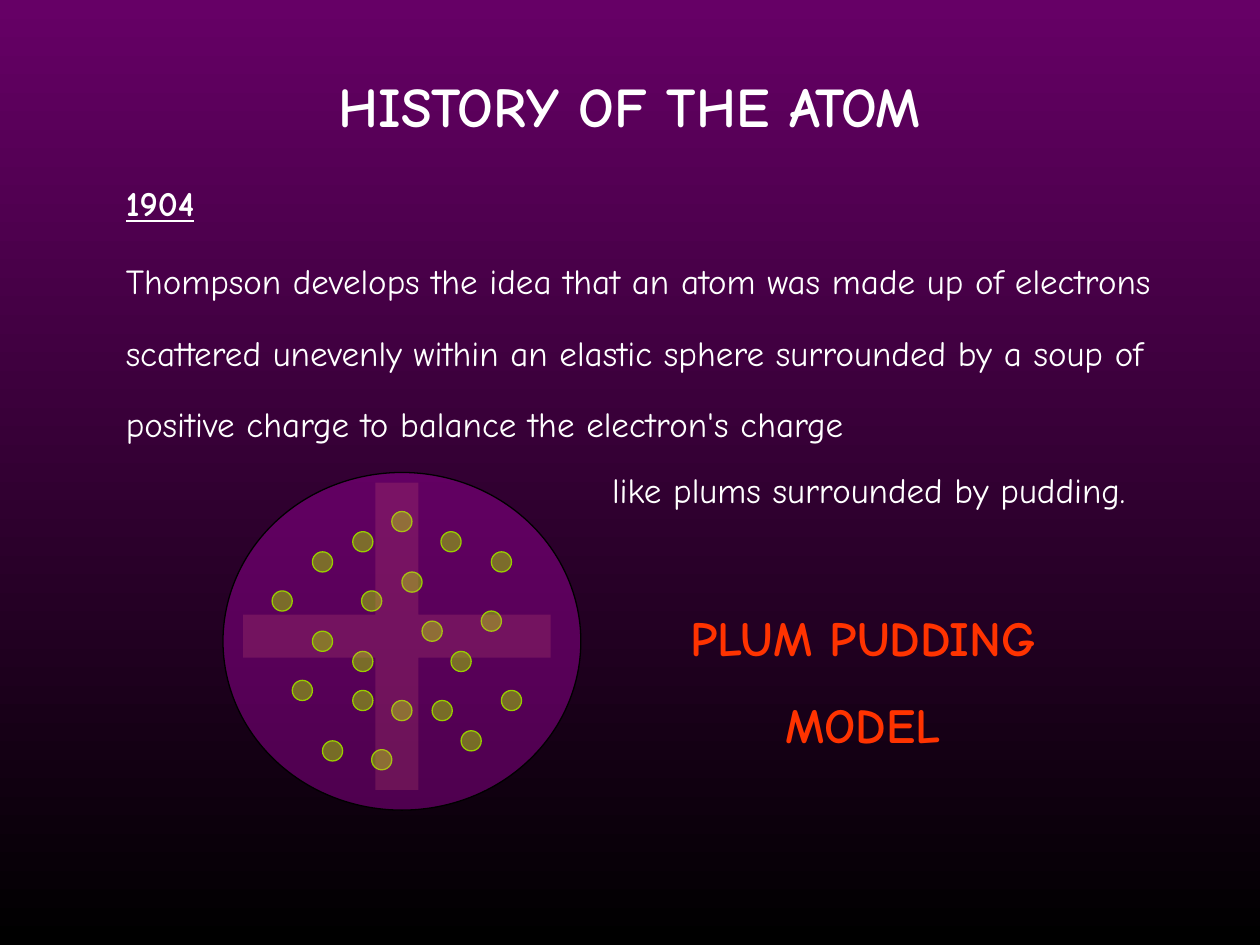
from lxml.etree import SubElement
from pptx import Presentation
from pptx.dml.color import RGBColor
from pptx.enum.shapes import MSO_SHAPE as Preset
from pptx.enum.text import MSO_AUTO_SIZE as AutoSize, PP_ALIGN as Align
from pptx.oxml.ns import qn
from pptx.util import Inches, Pt

WHITE = RGBColor(0xFF, 0xFF, 0xFF)
BLACK = RGBColor(0x00, 0x00, 0x00)
PURPLE = RGBColor(0x66, 0x00, 0x66)
PUDDING = RGBColor(0x99, 0x00, 0x99)
PLUM = RGBColor(0x99, 0xCC, 0x00)
PINK = RGBColor(0xFF, 0x7C, 0x80)
RED = RGBColor(0xFF, 0x33, 0x00)

FONT = "Comic Neue"
PLUM_SIZE = 0.16

TEXTS = [
    ((0, 0.52, 10, 0.63), ["HISTORY OF THE ATOM"],
     {"size": Pt(32), "bold": True}, {"alignment": Align.CENTER}),
    ((0.9, 1.39, 1.34, 0.43), ["1904"],
     {"bold": True, "underline": True}, {}),
    ((0.9, 1.78, 8.74, 2.13),
     ["Thompson develops the idea that an atom was made up of electrons "
      "scattered unevenly within an elastic sphere surrounded by a soup of "
      "positive charge to balance the electron's charge"],
     {}, {"line_spacing": 1.7}),
    ((4.76, 3.67, 4.73, 0.43), ["like plums surrounded by pudding."], {}, {}),
    ((4.92, 4.77, 3.86, 1.27), ["PLUM PUDDING", "MODEL"],
     {"size": Pt(28), "bold": True}, {"alignment": Align.CENTER}),
]

SPHERE = (1.77, 3.75, 2.84, 2.68)
CROSS = (1.93, 3.83, 2.44, 2.44)
PLUMS_BEHIND_CROSS = [
    (2.95, 5.95), (3.11, 4.06), (2.16, 4.69), (3.82, 4.85), (2.32, 5.4),
    (2.87, 4.69), (3.43, 5.56), (2.8, 5.17), (3.5, 4.22), (3.98, 5.48),
    (2.48, 4.38), (3.35, 4.93), (3.9, 4.38), (2.56, 5.88), (3.11, 5.56),
    (3.19, 4.54),
]
PLUMS_BEFORE_CROSS = [
    (2.8, 4.22), (3.58, 5.17), (3.66, 5.8), (2.48, 5.01), (2.8, 5.48),
]


def apply(target, values):
    for name, value in values.items():
        setattr(target, name, value)


def add_text(slide, box, lines, font_format, paragraph_format):
    frame = slide.shapes.add_textbox(*map(Inches, box)).text_frame
    apply(frame, {"word_wrap": True, "auto_size": AutoSize.SHAPE_TO_FIT_TEXT})
    for index, line in enumerate(lines):
        paragraph = frame.add_paragraph() if index else frame.paragraphs[0]
        apply(paragraph, paragraph_format)
        run = paragraph.add_run()
        run.text = line
        apply(run.font, {"name": FONT, "size": Pt(20), **font_format})
        run.font.color.rgb = RED if len(lines) > 1 else WHITE
        if index:
            paragraph.space_before = Pt(16)


def add_shape(slide, preset, box, color, opacity, line_color=None):
    shape = slide.shapes.add_shape(preset, *map(Inches, box))
    shape.shadow.inherit = False
    shape.fill.solid()
    shape.fill.fore_color.rgb = color
    color_element = shape._element.spPr.find(qn("a:solidFill"))[0]
    SubElement(color_element, qn("a:alpha"), val=str(opacity * 1000))
    if line_color is None:
        shape.line.fill.background()
    else:
        shape.line.color.rgb = line_color
        shape.line.width = Pt(0.75)
    return shape


def add_plums(slide, positions):
    for left, top in positions:
        add_shape(slide, Preset.OVAL, (left, top, PLUM_SIZE, PLUM_SIZE),
                  PLUM, 53, PLUM)


def main():
    presentation = Presentation()
    apply(presentation, {"slide_width": Inches(10), "slide_height": Inches(7.5)})
    slide = presentation.slides.add_slide(presentation.slide_layouts[6])

    background = slide.background.fill
    background.gradient()
    background.gradient_angle = 270
    for stop, position, color in zip(background.gradient_stops, (0, 1), (PURPLE, BLACK)):
        stop.position = position
        stop.color.rgb = color

    for text in TEXTS:
        add_text(slide, *text)

    add_shape(slide, Preset.OVAL, SPHERE, PUDDING, 47, BLACK)
    add_plums(slide, PLUMS_BEHIND_CROSS)
    cross = add_shape(slide, Preset.CROSS, CROSS, PINK, 16)
    cross.adjustments[0] = 0.43
    add_plums(slide, PLUMS_BEFORE_CROSS)

    presentation.save("out.pptx")


if __name__ == "__main__":
    main()
